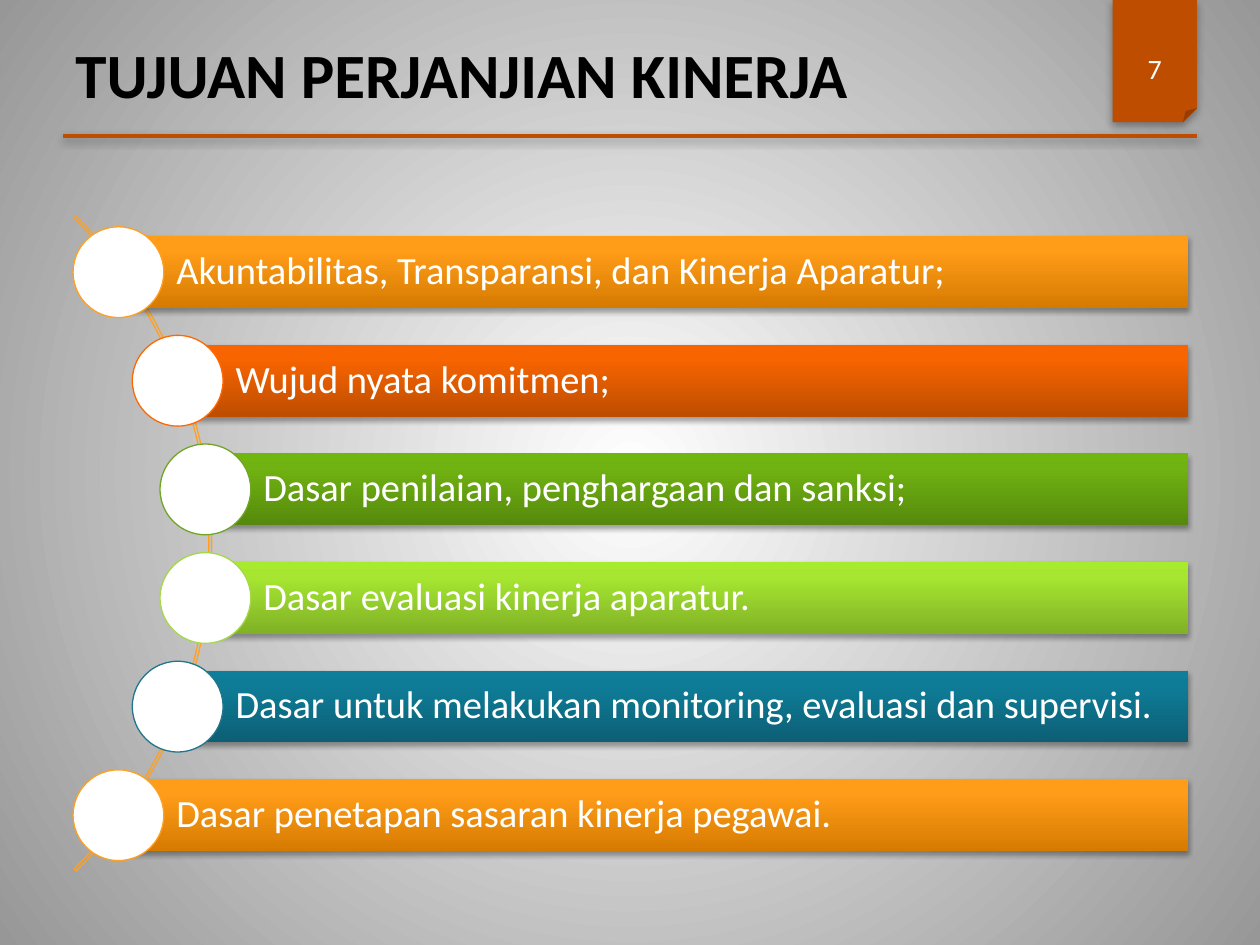
from dataclasses import dataclass

from lxml.etree import SubElement
from pptx import Presentation
from pptx.dml.color import RGBColor
from pptx.enum.shapes import MSO_CONNECTOR, MSO_SHAPE
from pptx.enum.text import MSO_ANCHOR, PP_ALIGN
from pptx.oxml.ns import qn
from pptx.util import Inches, Pt


@dataclass(frozen=True)
class Theme:
    font: str = "Calibri"
    black: str = "000000"
    white: str = "FFFFFF"
    edge_gray: str = "979797"
    accent: str = "BF4D00"
    arc: str = "FEA022"
    orange: tuple = ("FEA022", "D67B01", "FF9C18", "FF9D19")
    red: tuple = ("FF6700", "BE4D00", "F76400", "F86400")
    green: tuple = ("70A525", "56890D", "70B211", "71B60E")
    lime: tuple = ("A5D848", "80B126", "A6E631", "A8EB2E")
    teal: tuple = ("20768C", "0C5F75", "0F7C97", "0D7E9B")
    title_size: int = 36
    goal_size: int = 22
    number_size: int = 16


THEME = Theme()

GOALS = [
    ("Akuntabilitas, Transparansi, dan Kinerja Aparatur;", 0.94, THEME.orange),
    ("Wujud nyata komitmen;", 1.41, THEME.red),
    ("Dasar penilaian, penghargaan dan sanksi;", 1.63, THEME.green),
    ("Dasar evaluasi kinerja aparatur.", 1.63, THEME.lime),
    ("Dasar untuk melakukan monitoring, evaluasi dan supervisi.", 1.41, THEME.teal),
    ("Dasar penetapan sasaran kinerja pegawai.", 0.94, THEME.orange),
]
FIRST_CENTER, LAST_CENTER = 2.16, 6.47
BARS_RIGHT = 9.43
BAR_HEIGHT = 0.57
CIRCLE_SIZE = 0.72


def rgb(value):
    return RGBColor.from_string(value)


def add_xml(parent, tag, **attributes):
    return SubElement(parent, qn(tag), {key: str(value) for key, value in attributes.items()})


def set_gradient(fill, properties, stops, angle=None):
    fill.solid()
    solid = properties.find(qn("a:solidFill"))
    gradient = add_xml(properties, "a:gradFill", rotWithShape=1)
    stop_list = add_xml(gradient, "a:gsLst")
    for position, color in stops:
        stop = add_xml(stop_list, "a:gs", pos=position * 1000)
        add_xml(stop, "a:srgbClr", val=color)
    if angle is None:
        circle = add_xml(gradient, "a:path", path="circle")
        add_xml(circle, "a:fillToRect", l=50000, t=50000, r=50000, b=50000)
    else:
        add_xml(gradient, "a:lin", ang=angle * 60000, scaled=0)
    properties.replace(solid, gradient)


def add_shadow(properties, blur, distance, opacity):
    for old in properties.findall(qn("a:effectLst")):
        properties.remove(old)
    effects = add_xml(properties, "a:effectLst")
    shadow = add_xml(effects, "a:outerShdw", blurRad=Pt(blur), dist=Pt(distance),
                     dir=90 * 60000, rotWithShape=0)
    color = add_xml(shadow, "a:srgbClr", val=THEME.black)
    add_xml(color, "a:alpha", val=opacity * 1000)


def add_preset(slide, preset, left, top, width, height, fill=None, line=None):
    shape = slide.shapes.add_shape(preset, Inches(left), Inches(top), Inches(width), Inches(height))
    shape.shadow.inherit = False
    if fill:
        shape.fill.solid()
        shape.fill.fore_color.rgb = rgb(fill)
    else:
        shape.fill.background()
    if line:
        shape.line.color.rgb = rgb(line)
        shape.line.width = Pt(0.75)
    else:
        shape.line.fill.background()
    return shape


def write_text(shape, text, size, color, align=PP_ALIGN.LEFT, bold=False):
    frame = shape.text_frame
    frame.word_wrap = True
    frame.vertical_anchor = MSO_ANCHOR.MIDDLE
    frame.text = text
    paragraph = frame.paragraphs[0]
    paragraph.alignment = align
    font = paragraph.runs[0].font
    font.name = THEME.font
    font.size = Pt(size)
    font.bold = bold
    font.color.rgb = rgb(color)


def add_label(slide, left, top, width, height, text, size, color, **style):
    label = slide.shapes.add_textbox(Inches(left), Inches(top), Inches(width), Inches(height))
    write_text(label, text, size, color, **style)


def add_header(slide):
    page_tab = add_preset(slide, MSO_SHAPE.FOLDED_CORNER, 8.83, 0, 0.67, 0.97, THEME.accent)
    add_shadow(page_tab._element.spPr, 5, 1.8, 35)
    rule = slide.shapes.add_connector(
        MSO_CONNECTOR.STRAIGHT, Inches(0.5), Inches(1.08), Inches(9.5), Inches(1.08))
    rule.line.color.rgb = rgb(THEME.accent)
    rule.line.width = Pt(2)
    add_shadow(rule._element.spPr, 5, 1.6, 38)
    add_label(slide, 0.5, 0.17, 8.42, 0.83, "TUJUAN PERJANJIAN KINERJA",
              THEME.title_size, THEME.black, bold=True)
    add_label(slide, 8.83, 0.33, 0.67, 0.42, "7",
              THEME.number_size, THEME.white, align=PP_ALIGN.CENTER)


def add_arc(slide):
    arc = add_preset(slide, MSO_SHAPE.BLOCK_ARC, -5.67, 0.64, 7.35, 7.35, line=THEME.arc)
    for index, value in enumerate((189, 27, 0.003)):
        arc.adjustments[index] = value


def add_goal(slide, text, left, center, colors):
    outline, *shades = colors
    bar = add_preset(slide, MSO_SHAPE.RECTANGLE, left, center - BAR_HEIGHT / 2,
                     BARS_RIGHT - left, BAR_HEIGHT)
    set_gradient(bar.fill, bar._element.spPr, zip((0, 80, 100), shades), angle=270)
    add_shadow(bar._element.spPr, 3.1, 1.8, 35)
    write_text(bar, text, THEME.goal_size, THEME.white)
    frame = bar.text_frame
    frame.margin_left = Inches(0.46)
    frame.margin_top = frame.margin_right = frame.margin_bottom = Inches(0.06)
    frame.paragraphs[0].line_spacing = 0.9
    add_preset(slide, MSO_SHAPE.OVAL, left - CIRCLE_SIZE / 2, center - CIRCLE_SIZE / 2,
               CIRCLE_SIZE, CIRCLE_SIZE, THEME.white, outline)


def main():
    presentation = Presentation()
    presentation.slide_width = Inches(10)
    presentation.slide_height = Inches(7.5)
    slide = presentation.slides.add_slide(presentation.slide_layouts[6])
    backdrop = slide.background.fill
    backdrop.solid()
    set_gradient(backdrop, slide._element.cSld.bg.bgPr,
                 [(0, THEME.white), (100, THEME.edge_gray)])
    add_header(slide)
    add_arc(slide)
    pitch = (LAST_CENTER - FIRST_CENTER) / (len(GOALS) - 1)
    for row, (text, left, colors) in enumerate(GOALS):
        add_goal(slide, text, left, FIRST_CENTER + row * pitch, colors)
    presentation.save("out.pptx")


if __name__ == "__main__":
    main()
